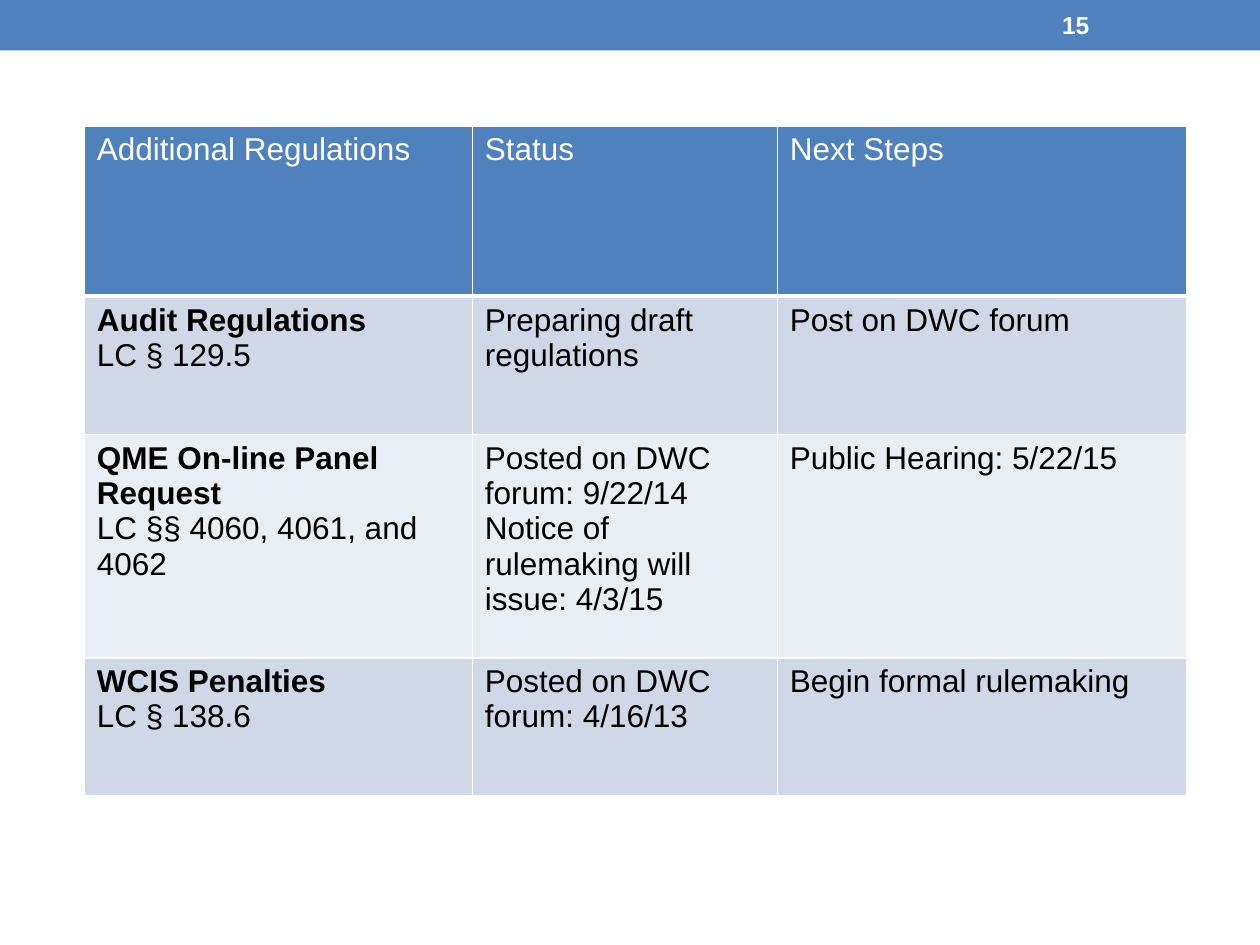
from dataclasses import dataclass

from lxml.etree import SubElement
from pptx import Presentation
from pptx.dml.color import RGBColor
from pptx.enum.shapes import MSO_SHAPE
from pptx.enum.text import MSO_ANCHOR
from pptx.oxml.ns import qn
from pptx.slide import Slide
from pptx.table import Table, _Cell
from pptx.text.text import Font
from pptx.util import Cm, Pt

COLORS = {
    "accent": "4F81BD",
    "band_dark": "D0D8E8",
    "band_light": "E9EDF4",
    "white": "FFFFFF",
    "black": "000000",
}
COLUMN_WIDTHS = (7.82, 6.15, 8.26)
HEADINGS = ("Additional Regulations", "Status", "Next Steps")
HEADER_HEIGHT = 3.43


@dataclass(frozen=True)
class Regulation:
    title: str
    labor_code: str
    status: str
    next_step: str
    height: float


REGULATIONS = (
    Regulation("Audit Regulations", "LC § 129.5",
               "Preparing draft regulations", "Post on DWC forum", 2.79),
    Regulation("QME On-line Panel Request", "LC §§ 4060, 4061, and 4062",
               "Posted on DWC forum: 9/22/14\nNotice of rulemaking will issue: 4/3/15",
               "Public Hearing: 5/22/15", 4.5),
    Regulation("WCIS Penalties", "LC § 138.6",
               "Posted on DWC forum: 4/16/13", "Begin formal rulemaking", 2.79),
)


def rgb(color: str) -> RGBColor:
    return RGBColor.from_string(COLORS[color])


def style_font(font: Font, size: float, color: str, bold: bool = False) -> None:
    font.name = "Arial"
    font.size = Pt(size)
    font.bold = bold
    font.color.rgb = rgb(color)


def add_borders(cell: _Cell, bottom_width: float) -> None:
    properties = cell._tc.get_or_add_tcPr()
    widths = {"a:lnL": 1, "a:lnR": 1, "a:lnT": 1, "a:lnB": bottom_width}
    for side, width in widths.items():
        border = SubElement(properties, qn(side), w=str(Pt(width)))
        border_fill = SubElement(border, qn("a:solidFill"))
        SubElement(border_fill, qn("a:srgbClr"), val=COLORS["white"])


def fill_cell(cell: _Cell, wording: str, fill: str, color: str,
              bold_first: bool = False, bottom_width: float = 1) -> None:
    add_borders(cell, bottom_width)
    cell.fill.solid()
    cell.fill.fore_color.rgb = rgb(fill)
    cell.text_frame.text = wording
    for index, paragraph in enumerate(cell.text_frame.paragraphs):
        for run in paragraph.runs:
            style_font(run.font, 18, color, bold_first and index == 0)


def fill_regulation(table: Table, row: int, regulation: Regulation) -> None:
    band = "band_dark" if row % 2 else "band_light"
    table.rows[row].height = Cm(regulation.height)
    entries = (f"{regulation.title}\n{regulation.labor_code}",
               regulation.status, regulation.next_step)
    for column, entry in enumerate(entries):
        fill_cell(table.cell(row, column), entry, band, "black",
                  bold_first=column == 0)


def add_regulations(slide: Slide) -> None:
    height = HEADER_HEIGHT + sum(regulation.height for regulation in REGULATIONS)
    table = slide.shapes.add_table(
        len(REGULATIONS) + 1, len(HEADINGS), Cm(1.7), Cm(2.54),
        Cm(sum(COLUMN_WIDTHS)), Cm(height)).table
    table.rows[0].height = Cm(HEADER_HEIGHT)
    for column, (heading, width) in enumerate(zip(HEADINGS, COLUMN_WIDTHS)):
        table.columns[column].width = Cm(width)
        fill_cell(table.cell(0, column), heading, "accent", "white",
                  bottom_width=3)
    for row, regulation in enumerate(REGULATIONS, start=1):
        fill_regulation(table, row, regulation)


def add_top_band(slide: Slide) -> None:
    band = slide.shapes.add_shape(MSO_SHAPE.RECTANGLE, 0, 0, Cm(25.4), Cm(1.02))
    band.shadow.inherit = False
    band.fill.solid()
    band.fill.fore_color.rgb = rgb("accent")
    band.line.fill.background()


def add_page_number(slide: Slide) -> None:
    page_number = slide.shapes.add_textbox(Cm(21.16), Cm(0.05), Cm(2.97), Cm(0.91))
    frame = page_number.text_frame
    frame.word_wrap = True
    frame.vertical_anchor = MSO_ANCHOR.MIDDLE
    frame.text = "15"
    style_font(frame.paragraphs[0].runs[0].font, 14, "white", bold=True)


def main() -> None:
    presentation = Presentation()
    presentation.slide_width = Cm(25.4)
    presentation.slide_height = Cm(19.05)
    slide = presentation.slides.add_slide(presentation.slide_layouts[6])
    add_top_band(slide)
    add_regulations(slide)
    add_page_number(slide)
    presentation.save("out.pptx")


if __name__ == "__main__":
    main()
